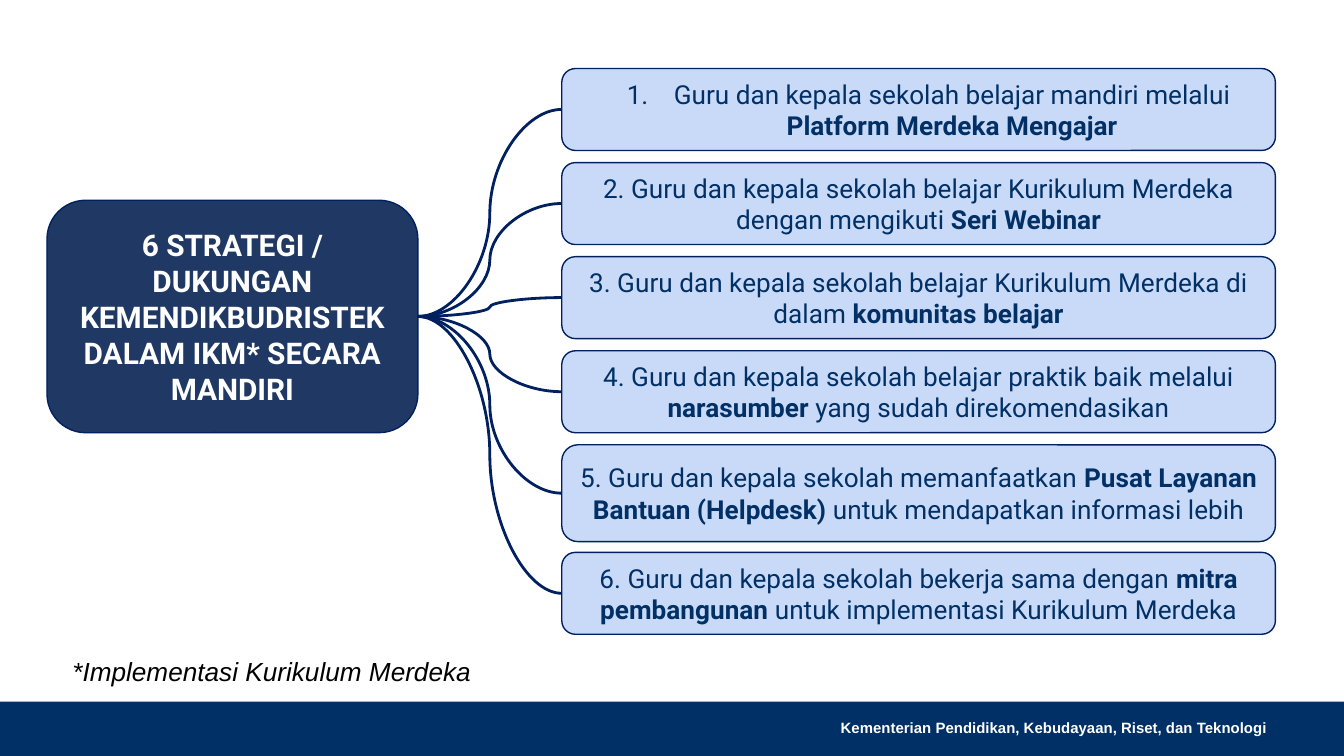
from lxml.etree import SubElement
from pptx import Presentation
from pptx.dml.color import RGBColor
from pptx.enum.shapes import MSO_CONNECTOR as Connector, MSO_SHAPE as Shape
from pptx.enum.text import MSO_ANCHOR as Anchor, PP_ALIGN as Align
from pptx.oxml.ns import qn
from pptx.util import Inches, Pt

NAVY, BLUE, DARK, PALE = "002060", "013066", "1F3864", "C9DAF8"
WHITE, BLACK = "FFFFFF", "000000"

# Each strategy: box height and runs of (text, bold)
STRATEGIES = [
    (0.61, [("Guru dan kepala sekolah belajar mandiri melalui ", False),
            ("Platform Merdeka Mengajar", True)]),
    (0.61, [("2. Guru dan kepala sekolah belajar Kurikulum Merdeka dengan mengikuti ", False),
            ("Seri Webinar", True)]),
    (0.61, [("3. Guru dan kepala sekolah belajar Kurikulum Merdeka di dalam ", False),
            ("komunitas belajar", True)]),
    (0.61, [("4. Guru dan kepala sekolah belajar praktik baik melalui ", False),
            ("narasumber", True),
            (" yang sudah direkomendasikan", False)]),
    (0.72, [("5. Guru dan kepala sekolah memanfaatkan ", False),
            ("Pusat Layanan Bantuan (Helpdesk)", True),
            (" untuk mendapatkan informasi lebih", False)]),
    (0.61, [("6. Guru dan kepala sekolah bekerja sama dengan ", False),
            ("mitra pembangunan ", True),
            ("untuk implementasi Kurikulum Merdeka", False)]),
]
FIRST_TOP, GAP = 0.51, 0.09


def color(value):
    return RGBColor.from_string(value)


def write(shape, runs, size, font_name, font_color, align, margin=0.1, italic=False):
    frame = shape.text_frame
    frame.word_wrap = True
    frame.margin_left = frame.margin_right = Inches(margin)
    frame.margin_top = frame.margin_bottom = Inches(margin)
    paragraph = frame.paragraphs[0]
    paragraph.alignment = align
    for text, bold in runs:
        run = paragraph.add_run()
        run.text = text
        run.font.size = Pt(size)
        run.font.name = font_name
        run.font.bold = bold
        run.font.italic = italic
        run.font.color.rgb = color(font_color)
    return paragraph


def add_panel(parent, kind, left, top, width, height, fill, line=None):
    shape = parent.shapes.add_shape(
        kind, Inches(left), Inches(top), Inches(width), Inches(height))
    shape.shadow.inherit = False
    shape.fill.solid()
    shape.fill.fore_color.rgb = color(fill)
    if line:
        shape.line.color.rgb = color(line)
        shape.line.width = Pt(0.75)
    else:
        shape.line.fill.background()
    return shape


def add_box(slide, left, top, width, height, fill, runs, size, font_color):
    box = add_panel(slide, Shape.ROUNDED_RECTANGLE, left, top, width, height, fill, NAVY)
    box.text_frame.vertical_anchor = Anchor.MIDDLE
    paragraph = write(box, runs, size, "Roboto", font_color, Align.CENTER)
    return box, paragraph


def add_label(parent, left, top, width, height, *text, **options):
    label = parent.shapes.add_textbox(
        Inches(left), Inches(top), Inches(width), Inches(height))
    write(label, *text, **options)


def number(paragraph, number_color):
    properties = paragraph._p.get_or_add_pPr()
    properties.set("marL", str(Inches(0.5)))
    properties.set("indent", str(Inches(-0.35)))
    bullet_color = SubElement(properties, qn("a:buClr"))
    SubElement(bullet_color, qn("a:srgbClr")).set("val", number_color)
    SubElement(properties, qn("a:buAutoNum")).set("type", "arabicPeriod")


def add_branch(slide, root, box):
    branch = slide.shapes.add_connector(Connector.CURVE, 0, 0, 0, 0)
    branch.begin_connect(root, 3)
    branch.end_connect(box, 1)
    branch.line.color.rgb = color(NAVY)
    branch.line.width = Pt(1.5)
    SubElement(branch._element.spPr, qn("a:effectLst"))


def main():
    presentation = Presentation()
    presentation.slide_width = Inches(10)
    presentation.slide_height = Inches(10) * 9 // 16
    slide = presentation.slides.add_slide(presentation.slide_layouts[6])

    footer = slide.shapes.add_group_shape()
    bar = add_panel(footer, Shape.ROUNDED_RECTANGLE, 0, 5.22, 10, 0.4, BLUE)
    bar.adjustments[0] = 0
    bar.height = presentation.slide_height - bar.top
    add_label(footer, 6, 5.28, 3.5, 0.29,
              [("Kementerian Pendidikan, Kebudayaan, Riset, dan Teknologi", True)],
              8, "Arial", WHITE, Align.RIGHT, margin=0.07)

    heading = "6 STRATEGI / DUKUNGAN KEMENDIKBUDRISTEK DALAM IKM* SECARA MANDIRI"
    root, _ = add_box(slide, 0.35, 1.49, 2.76, 1.73, DARK, [(heading, True)], 16, WHITE)

    top = FIRST_TOP
    for index, (height, runs) in enumerate(STRATEGIES):
        box, paragraph = add_box(slide, 4.18, top, 5.31, height, PALE, runs, 14, BLUE)
        if index == 0:
            number(paragraph, BLUE)
        add_branch(slide, root, box)
        top += round(height + GAP, 1)

    add_label(slide, 0.44, 4.78, 3.37, 0.44,
              [("*Implementasi Kurikulum Merdeka", False)],
              14, "Arial", BLACK, Align.LEFT, italic=True)

    presentation.save("out.pptx")


if __name__ == "__main__":
    main()
